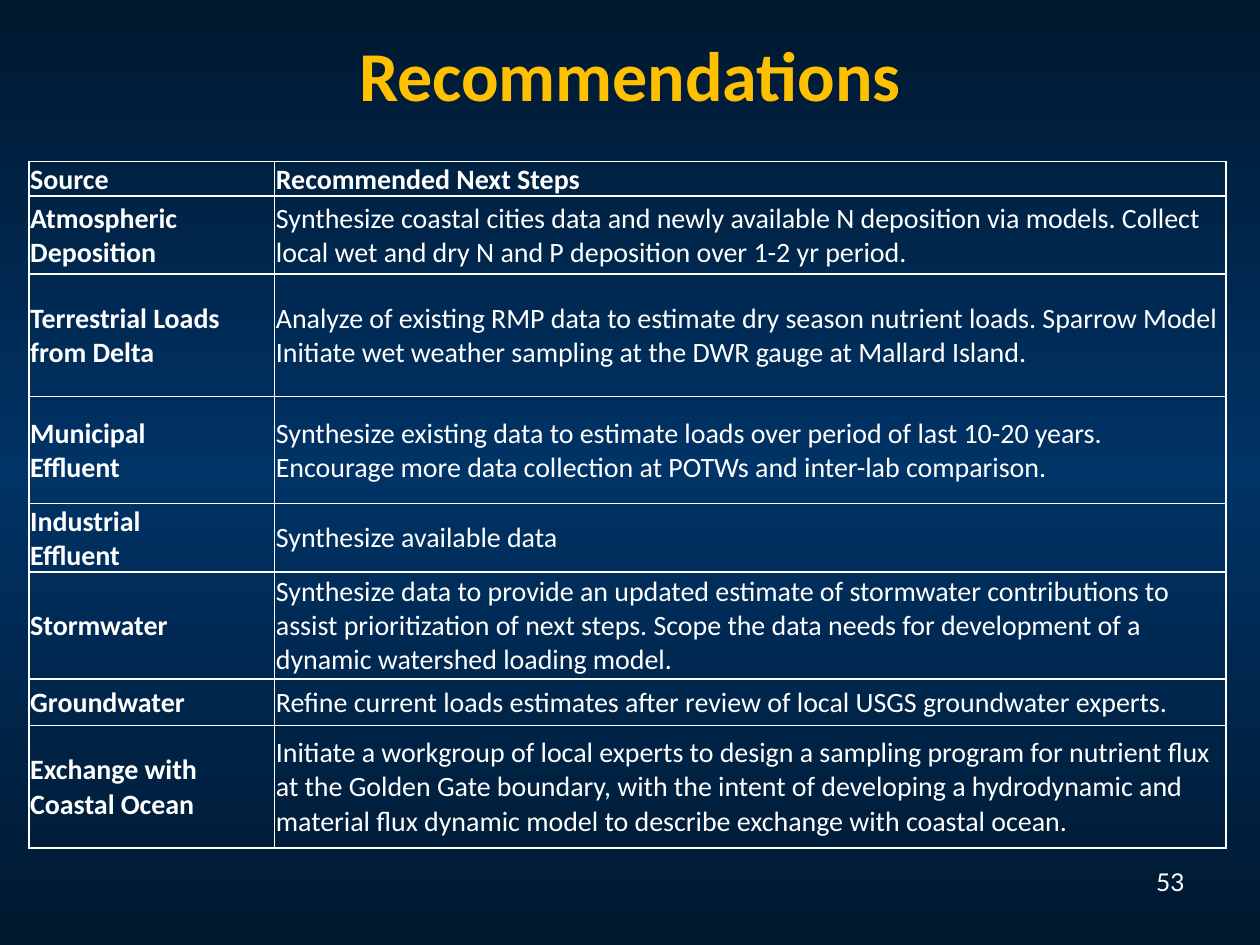
from copy import deepcopy

from lxml import etree
from pptx import Presentation
from pptx.dml.color import RGBColor
from pptx.enum.text import MSO_ANCHOR, PP_ALIGN
from pptx.oxml.ns import qn
from pptx.util import Inches, Pt

CENTER, RIGHT = PP_ALIGN.CENTER, PP_ALIGN.RIGHT
MIDDLE = MSO_ANCHOR.MIDDLE
COLORS = {"edge": "00182F", "middle": "003366", "title": "FFC000", "text": "FFFFFF"}


def add_run(paragraph, text, size, color, bold=False, font="Calibri"):
    run = paragraph.add_run()
    run.text = text
    run.font.name = font
    run.font.size = Pt(size)
    run.font.bold = bold
    run.font.color.rgb = RGBColor.from_string(COLORS[color])


def add_borders(cell):
    properties = cell._tc.get_or_add_tcPr()
    for position, side in enumerate(("lnL", "lnR", "lnT", "lnB")):
        line = etree.Element(qn(f"a:{side}"), w=str(Pt(1)))
        solid = etree.SubElement(line, qn("a:solidFill"))
        etree.SubElement(solid, qn("a:srgbClr"), val=COLORS["text"])
        properties.insert(position, line)


prs = Presentation()
prs.slide_width = Inches(10)
prs.slide_height = Inches(7.5)
slide = prs.slides.add_slide(prs.slide_layouts[6])

backdrop = slide.background.fill
backdrop.gradient()
backdrop.gradient_angle = 90
stop_list = slide.element.xpath(".//a:gsLst")[0]
stop_list.append(deepcopy(stop_list[-1]))
for stop, (position, color) in zip(
    backdrop.gradient_stops, [(0, "edge"), (0.5, "middle"), (1, "edge")]
):
    stop.position = position
    stop.color.rgb = RGBColor.from_string(COLORS[color])

title = slide.shapes.add_textbox(Inches(0), Inches(0.2), Inches(10), Inches(0.77)).text_frame
title.word_wrap = True
title.paragraphs[0].alignment = CENTER
add_run(title.paragraphs[0], "Recommendations", 40, "title", bold=True)

recommendations = [
    (0.27, ["Source"], "Recommended Next Steps"),
    (0.62, ["Atmospheric", "Deposition"],
     "Synthesize coastal cities data and newly available N deposition via models. "
     "Collect local wet and dry N and P deposition over 1-2 yr period."),
    (0.97, ["Terrestrial Loads ", "from Delta"],
     "Analyze of existing RMP data to estimate dry season nutrient loads. Sparrow Model "
     "Initiate wet weather sampling at the DWR gauge at Mallard Island."),
    (0.85, ["Municipal ", "Effluent"],
     "Synthesize existing data to estimate loads over period of last 10-20 years. "
     "Encourage more data collection at POTWs and inter-lab comparison."),
    (0.54, ["Industrial ", "Effluent"], "Synthesize available data"),
    (0.85, ["Stormwater"],
     "Synthesize data to provide an updated estimate of stormwater contributions to "
     "assist prioritization of next steps. Scope the data needs for development of a "
     "dynamic watershed loading model."),
    (0.37, ["Groundwater"],
     "Refine current loads estimates after review of local USGS groundwater experts."),
    (0.97, ["Exchange with ", "Coastal Ocean"],
     "Initiate a workgroup of local experts to design a sampling program for nutrient flux "
     "at the Golden Gate boundary, with the intent of developing a hydrodynamic and "
     "material flux dynamic model to describe exchange with coastal ocean."),
]

table = slide.shapes.add_table(
    len(recommendations), 2, Inches(0.23), Inches(1.28), Inches(9.5), Inches(5.45)
).table
table.first_row = False
table.horz_banding = False
table.columns[0].width = Inches(1.95)
table.columns[1].width = Inches(7.55)

for row, (height, source, steps) in enumerate(recommendations):
    table.rows[row].height = Inches(height)
    for column, lines in enumerate((source, [steps])):
        cell = table.cell(row, column)
        cell.fill.background()
        cell.vertical_anchor = MIDDLE
        cell.margin_left = cell.margin_right = cell.margin_top = Inches(0.01)
        cell.margin_bottom = Inches(0)
        add_borders(cell)
        paragraph = cell.text_frame.paragraphs[0]
        for number, line in enumerate(lines):
            if number:
                paragraph.add_line_break()
            add_run(paragraph, line, 16, "text", bold=row == 0 or column == 0)

page = slide.shapes.add_textbox(Inches(7.17), Inches(6.83), Inches(2.33), Inches(0.52)).text_frame
page.word_wrap = True
page.paragraphs[0].alignment = RIGHT
add_run(page.paragraphs[0], "53", 14, "text", font="Lato")

prs.save("out.pptx")
